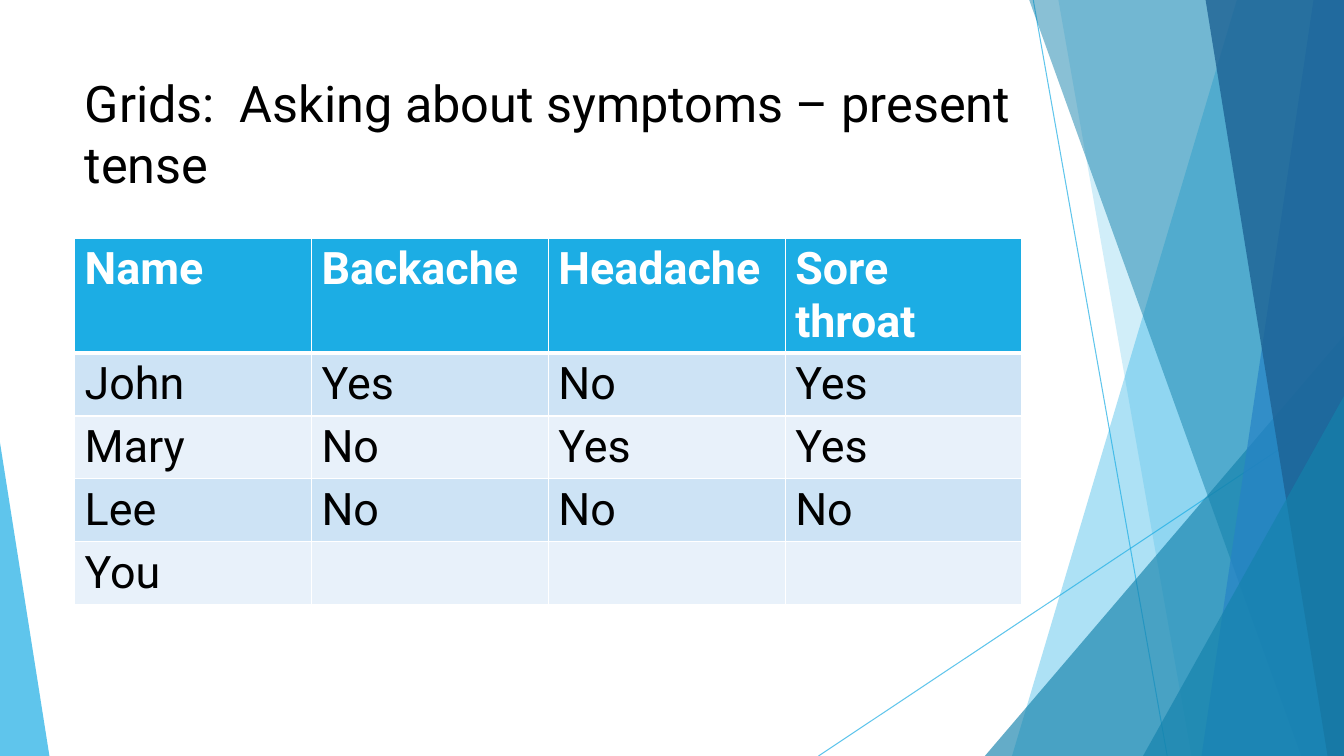
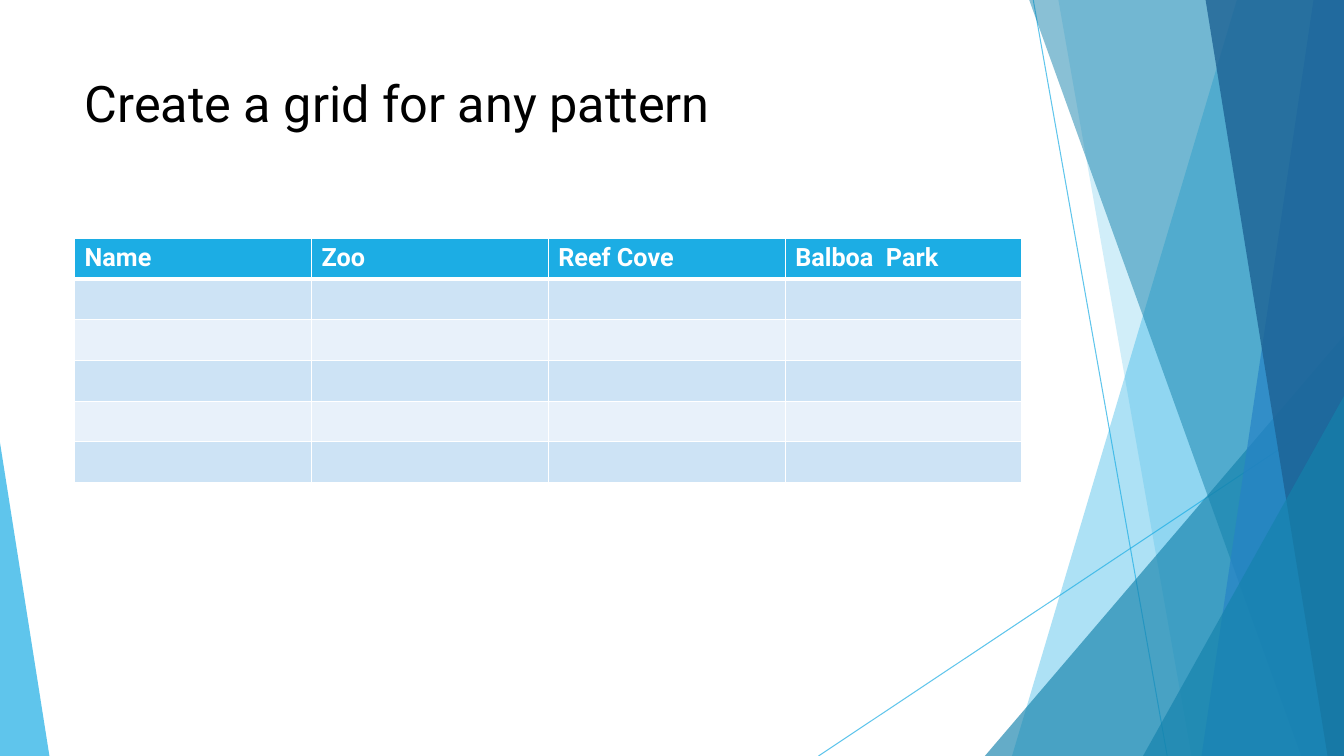
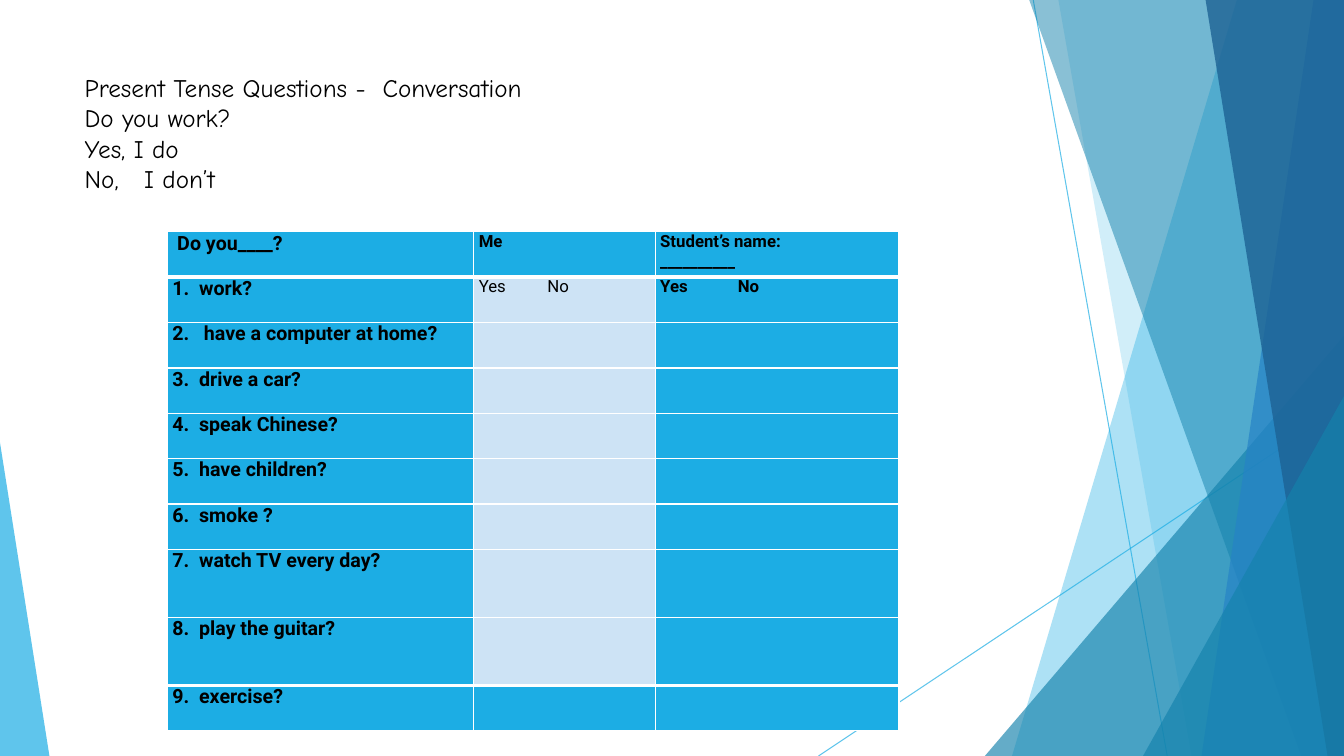
"""Three language lesson slides: a title and an answer grid on a faceted backdrop."""
import dataclasses

import pptx
import pptx.util
import pptx.dml.color
import pptx.enum.shapes
import pptx.enum.text
import pptx.oxml.ns
from lxml import etree

WIDE = pptx.util.Inches(13.33)
HIGH = pptx.util.Inches(7.5)
qn = pptx.oxml.ns.qn


@dataclasses.dataclass(frozen=True)
class Theme:
    """Colours, fonts and type sizes of the deck."""
    sky: str = "1CADE4"
    teal: str = "1482AC"
    blue: str = "2683C6"
    navy: str = "1D6294"
    band: str = "CDE3F5"
    pale: str = "E8F1FA"
    white: str = "FFFFFF"
    black: str = "000000"
    sans: str = "Roboto"
    comic: str = "Comic Neue"
    head: int = 36
    large: int = 32
    body: int = 18
    label: int = 14
    small: int = 12
    thin: int = 1
    thick: int = 3


THEME = Theme()

LINES = [((76.88, 0), (86.85, 100)), ((100, 53.73), (60.9, 100))]
FACETS = [
    ("free", (92.03, 100, 100, 75.3), THEME.sky, 36),
    ("free", (78.75, 100, 100, 88.65), THEME.sky, 20),
    ("tri", (73.28, 44.4, 100, 1), THEME.teal, 66),
    ("free", (76.58, 100, 100, 96.83), THEME.teal, 50),
    ("free", (97.73, 100, 100, 89.4), THEME.blue, 70),
    ("free", (89.7, 100, 100, 98.78), THEME.navy, 80),
    ("tri", (85.05, 52.4, 100, 1), THEME.teal, 66),
    ("tri", (0, 58.53, 3.68, 0), THEME.sky, 70),
]

LEFT, SPAN = 5.55, 70.5
ACHES = [
    ["Name", "Backache", "Headache", "Sore throat"],
    ["John", "Yes", "No", "Yes"],
    ["Mary", "No", "Yes", "Yes"],
    ["Lee", "No", "No", "No"],
    ["You", "", "", ""],
]
PLACES = [["Name", "Zoo", "Reef Cove", "Balboa  Park"]] + [[""] * 4] * 5
ASKS = [
    "work?", " have a computer at home?", "drive a car?", "speak Chinese?",
    "have children?", "smoke ?", "watch TV every day?", "play the guitar?",
    "exercise?",
]


def across(share):
    """Turn a percentage of the slide's width into a length."""
    return pptx.util.Emu(round(WIDE * share / 100))


def down(share):
    """Turn a percentage of the slide's height into a length."""
    return pptx.util.Emu(round(HIGH * share / 100))


def tint(code):
    """Make a colour from its hex code."""
    return pptx.dml.color.RGBColor.from_string(code)


def fade(shape, share):
    """Make the colours of a shape partly see-through."""
    for node in list(shape.element.iter(qn("a:srgbClr"))):
        etree.SubElement(node, qn("a:alpha"), val=str(share * 1000))


def write(par, face, size, ink, bold=False):
    """Set the font of a paragraph."""
    font = par.font
    font.name, font.size, font.bold = face, pptx.util.Pt(size), bold
    font.color.rgb = tint(ink)


def stop(par, inch):
    """Give a paragraph one left tab stop."""
    tabs = etree.Element(qn("a:tabLst"))
    etree.SubElement(tabs, qn("a:tab"), pos=str(pptx.util.Inches(inch)), algn="l")
    par._p.get_or_add_pPr().insert(0, tabs)


def ray(shapes, start, end):
    """Draw a thin line between two points."""
    line = shapes.add_connector(
        pptx.enum.shapes.MSO_CONNECTOR.STRAIGHT,
        across(start[0]), down(start[1]), across(end[0]), down(end[1]))
    line.line.color.rgb = tint(THEME.sky)
    line.line.width = pptx.util.Pt(0.75)
    etree.SubElement(line.element.spPr, qn("a:effectLst"))
    fade(line, 70)
    return line


def blade(shapes, top, right, base, foot):
    """Outline a full-height facet by its corners."""
    build = shapes.build_freeform(across(top), 0)
    build.add_line_segments(
        [(across(right), 0), (across(base), HIGH), (across(foot), HIGH)])
    return build.convert_to_shape()


def wedge(shapes, left, top, right, peak):
    """Draw a right-angled triangle standing on the slide's foot."""
    shape = shapes.add_shape(
        pptx.enum.shapes.MSO_SHAPE.ISOSCELES_TRIANGLE,
        across(left), down(top), across(right - left), down(100 - top))
    shape.adjustments[0] = peak
    return shape


def facet(shapes, kind, spot, code, share):
    """Draw one see-through facet."""
    shape = {"free": blade, "tri": wedge}[kind](shapes, *spot)
    shape.shadow.inherit = False
    shape.fill.solid()
    shape.fill.fore_color.rgb = tint(code)
    shape.line.fill.background()
    fade(shape, share)
    return shape


def decor(slide, layout):
    """Draw the backdrop and move it to the layout that all slides share."""
    parts = [ray(slide.shapes, *ends) for ends in LINES]
    parts += [facet(slide.shapes, *item) for item in FACETS]
    for rank, part in enumerate(parts):
        next(part.element.iter(qn("p:cNvPr"))).set("id", str(20 + rank))
        layout.shapes.element.insert(2 + rank, part.element)


def title(slide, text, face=THEME.sans, size=THEME.head, tab=None):
    """Place and format the title."""
    shape = slide.shapes.title
    shape.left, shape.top = across(LEFT), down(8.93)
    shape.width, shape.height = across(SPAN), down(19.2)
    frame = shape.text_frame
    frame.text = text
    frame.word_wrap = True
    frame.auto_size = pptx.enum.text.MSO_AUTO_SIZE.NONE
    frame.vertical_anchor = pptx.enum.text.MSO_ANCHOR.TOP
    par = frame.paragraphs[0]
    par.alignment = pptx.enum.text.PP_ALIGN.LEFT
    write(par, face, size, THEME.black)
    if tab:
        stop(par, tab)


def edge(cell, top, base):
    """Rule the four sides of a cell in white."""
    sides = {"L": THEME.thin, "R": THEME.thin, "T": top, "B": base}
    for side, width in sides.items():
        line = etree.SubElement(
            cell._tc.get_or_add_tcPr(), qn("a:ln" + side),
            w=str(pptx.util.Pt(width)))
        fill = etree.SubElement(line, qn("a:solidFill"))
        etree.SubElement(fill, qn("a:srgbClr"), val=THEME.white)


def grid(slide, spot, cols, rows, data, look, heavy=(1,), tight=False, tabs=()):
    """Add a table whose look(row, column) gives fill, size, ink and bold."""
    table = slide.shapes.add_table(
        len(rows), len(cols), across(spot[0]), down(spot[1]),
        across(sum(cols)), down(sum(rows))).table
    table.horz_banding = False
    for col, share in zip(table.columns, cols):
        col.width = across(share)
    for row, share in zip(table.rows, rows):
        row.height = down(share)
    for r, texts in enumerate(data):
        top, base = (THEME.thick if n in heavy else THEME.thin for n in (r, r + 1))
        for c, text in enumerate(texts):
            cell = table.cell(r, c)
            code, *style = look(r, c)
            edge(cell, top, base)
            cell.fill.solid()
            cell.fill.fore_color.rgb = tint(code)
            if tight:
                cell.margin_left = cell.margin_right = pptx.util.Inches(0.05)
                cell.margin_top = cell.margin_bottom = 0
            if text:
                cell.text = text
            for par in cell.text_frame.paragraphs:
                write(par, THEME.sans, *style)
                if "\t" in text:
                    stop(par, tabs[c])


def banded(size):
    """Make a look with a solid header and striped rows."""
    def look(r, c):
        """Style one cell by its row."""
        if r == 0:
            return THEME.sky, size, THEME.white, True
        return (THEME.band if r % 2 else THEME.pale), size, THEME.black, False
    return look


def survey(r, c):
    """Style a survey cell: only the inner middle column is light."""
    inner = c == 1 and 0 < r < len(ASKS)
    size = THEME.small if c else THEME.label
    return (THEME.band if inner else THEME.sky), size, THEME.black, not inner


def main():
    """Build and save the deck."""
    deck = pptx.Presentation()
    deck.slide_width, deck.slide_height = WIDE, HIGH
    layout = deck.slide_layouts[5]
    aches, places, talk = (deck.slides.add_slide(layout) for _ in range(3))
    decor(aches, layout)
    quarters = [SPAN / 4] * 4

    title(aches, "Grids:  Asking about symptoms – present tense")
    grid(aches, (LEFT, 31.47), quarters, [15] + [8.3] * 4, ACHES,
         banded(THEME.large))

    title(places, "Create a grid for any pattern")
    grid(places, (LEFT, 31.47), quarters, [5.4] * 6, PLACES, banded(THEME.body))

    title(talk, "Present Tense Questions -  Conversation\vDo you work?\v"
          "Yes, I do\vNo,\tI don’t", THEME.comic, THEME.body, 0.59)
    data = [[" Do you____?", "Me", "Student’s name:\n__________"]]
    data += [[f"{n}.  {ask}"] + ["Yes\tNo" if n == 1 else ""] * 2
             for n, ask in enumerate(ASKS, 1)]
    grid(talk, (12.45, 30.67), [22.8, 13.5, 18.15], [6] * 7 + [9] * 2 + [6],
         data, survey, heavy=(1, len(ASKS)), tight=True, tabs=(0, 0.68, 0.77))
    deck.save("out.pptx")


if __name__ == "__main__":
    main()
